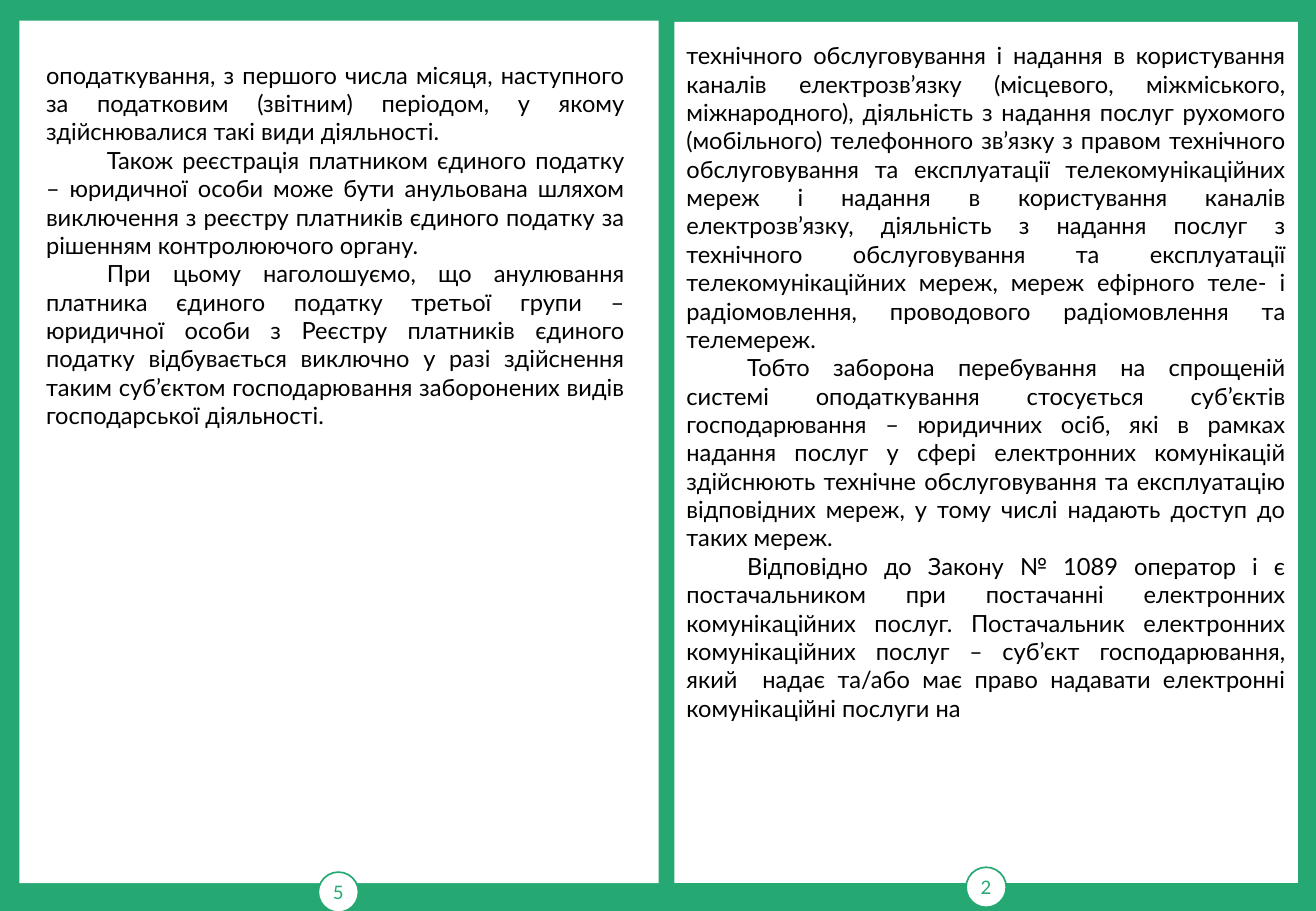
from pptx import Presentation
from pptx.dml.color import RGBColor
from pptx.enum.shapes import MSO_SHAPE as Shape
from pptx.enum.text import MSO_ANCHOR as Anchor, PP_ALIGN as Align
from pptx.util import Inches, Pt

GREEN, WHITE, BLACK = "25A872", "FFFFFF", "000000"

LEFT_TEXT = [
    "оподаткування, з першого числа місяця, наступного за податковим (звітним) періодом, "
    "у якому здійснювалися такі види діяльності.",
    "Також реєстрація платником єдиного податку – юридичної особи може бути анульована "
    "шляхом виключення з реєстру платників єдиного податку за рішенням контролюючого органу.",
    "При цьому наголошуємо, що анулювання платника єдиного податку третьої групи – "
    "юридичної особи з Реєстру платників єдиного податку відбувається виключно у разі "
    "здійснення таким суб’єктом господарювання заборонених видів господарської діяльності.",
]
RIGHT_TEXT = [
    "технічного обслуговування і надання в користування каналів електрозв’язку (місцевого, "
    "міжміського, міжнародного), діяльність з надання послуг рухомого (мобільного) "
    "телефонного зв’язку з правом технічного обслуговування та експлуатації "
    "телекомунікаційних мереж і надання в користування каналів електрозв’язку, діяльність "
    "з надання послуг з технічного обслуговування та експлуатації телекомунікаційних мереж, "
    "мереж ефірного теле- і радіомовлення, проводового радіомовлення та телемереж.",
    "Тобто заборона перебування на спрощеній системі оподаткування стосується суб’єктів "
    "господарювання – юридичних осіб, які в рамках надання послуг у сфері електронних "
    "комунікацій здійснюють технічне обслуговування та експлуатацію відповідних мереж, "
    "у тому числі надають доступ до таких мереж.",
    "Відповідно до Закону № 1089 оператор і є постачальником при постачанні електронних "
    "комунікаційних послуг. Постачальник електронних комунікаційних послуг ‒ суб’єкт "
    "господарювання, який  надає та/або має право надавати електронні комунікаційні "
    "послуги на",
]


def color(value):
    return RGBColor.from_string(value)


class Booklet:
    """Places elements on one page, with lengths in percent of the page size."""

    font = "Lato"
    first_line_indent = Inches(0.5)

    def __init__(self, deck):
        self.deck = deck
        self.page = deck.slides.add_slide(deck.slide_layouts[6])
        fill = self.page.background.fill
        fill.solid()
        fill.fore_color.rgb = color(GREEN)

    def area(self, left, top, width, height):
        across, down = self.deck.slide_width / 100, self.deck.slide_height / 100
        return [round(n) for n in (left * across, top * down, width * across, height * down)]

    def shape(self, group, kind, area, line=None):
        shape = group.shapes.add_shape(kind, *self.area(*area))
        shape.shadow.inherit = False
        shape.fill.solid()
        shape.fill.fore_color.rgb = color(WHITE)
        if line:
            shape.line.color.rgb = color(line)
            shape.line.width = Pt(1)
        else:
            shape.line.fill.background()
        return shape

    def span(self, para, text, size, ink):
        span = para.add_run()
        span.text = text
        span.font.name, span.font.size = self.font, Pt(size)
        span.font.color.rgb = color(ink)

    def sheet(self, area, badge_left, badge_top, number):
        """Adds a white sheet with its page number in a round badge."""
        group = self.page.shapes.add_group_shape()
        self.shape(group, Shape.RECTANGLE, area)
        badge = self.shape(group, Shape.OVAL, (badge_left, badge_top, 3.05, 4.4), GREEN)
        frame = badge.text_frame
        frame.margin_left = frame.margin_right = 0
        frame.vertical_anchor = Anchor.MIDDLE
        para = frame.paragraphs[0]
        para.alignment = Align.CENTER
        self.span(para, number, 11, GREEN)

    def text(self, area, passages):
        """Adds justified text; every passage after the first has an indented first line."""
        box = self.page.shapes.add_textbox(*self.area(*area))
        frame = box.text_frame
        frame.word_wrap = True
        for index, passage in enumerate(passages):
            para = frame.add_paragraph() if index else frame.paragraphs[0]
            para.alignment = Align.JUSTIFY
            if index:
                properties = para._p.get_or_add_pPr()
                properties.set("marL", "0")
                properties.set("indent", str(self.first_line_indent))
            self.span(para, passage, 14, BLACK)


def main():
    deck = Presentation()
    deck.slide_width, deck.slide_height = Inches(10.83), Inches(7.5)
    booklet = Booklet(deck)
    booklet.sheet((1.48, 2.27, 48.57, 94.67), 24.19, 95.73, "5")
    booklet.sheet((51.25, 2.4, 47.37, 94.53), 73.41, 95.2, "2")
    booklet.text((51.25, 3.87, 47.37, 92.53), RIGHT_TEXT)
    booklet.text((2.59, 6, 45.8, 65.33), LEFT_TEXT)
    deck.save("out.pptx")


if __name__ == "__main__":
    main()
